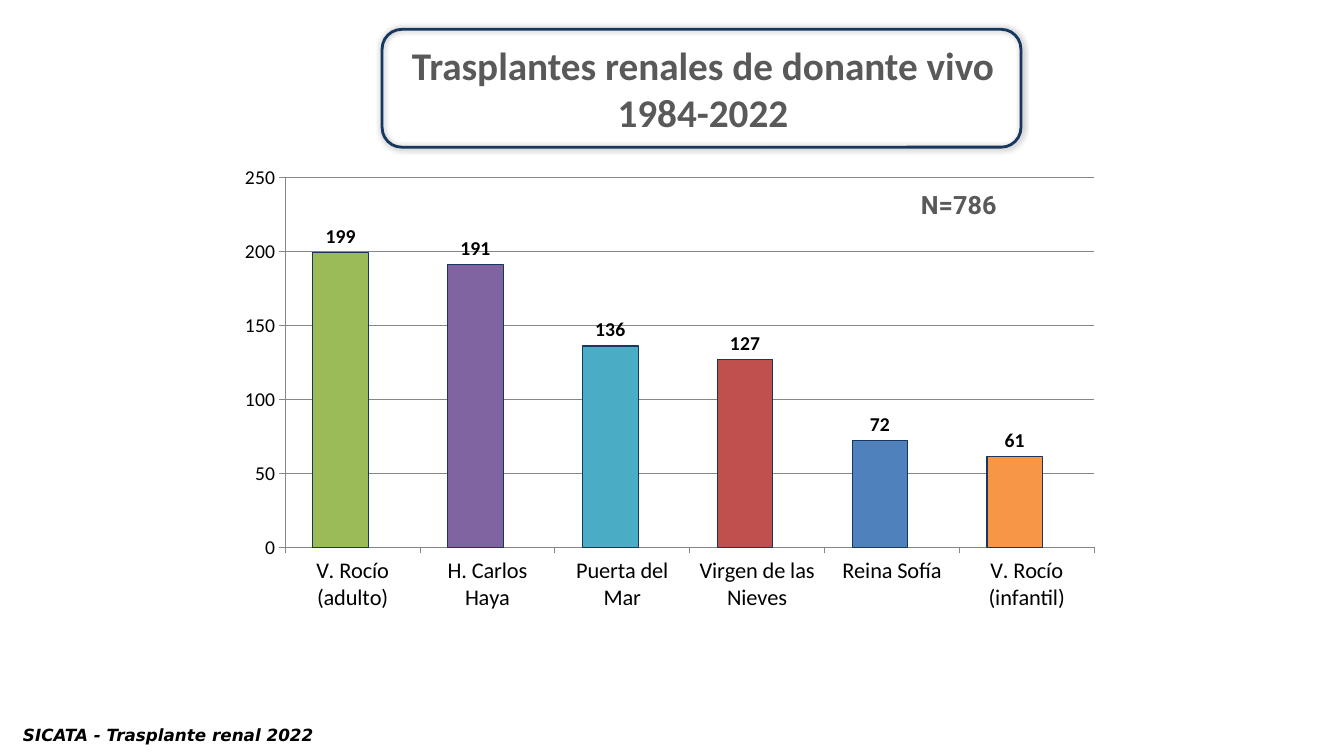
import pptx
import pptx.chart.data
import pptx.dml.color
import pptx.enum.chart
import pptx.enum.dml
import pptx.enum.text
import pptx.oxml
import pptx.util
from dataclasses import dataclass
from pptx.enum.shapes import MSO_SHAPE

Cm, Pt = pptx.util.Cm, pptx.util.Pt
RGB = pptx.dml.color.RGBColor.from_string

HEADING = ["Trasplantes renales de donante vivo", "1984-2022"]
TOTAL = ["N=786"]
FOOTNOTE = ["SICATA - Trasplante renal 2022"]
HOSPITALS = [
    ("V. Rocío (adulto)", 199, "9BBB59"),
    ("H. Carlos Haya", 191, "8064A2"),
    ("Puerta del Mar", 136, "4BACC6"),
    ("Virgen de las Nieves", 127, "C0504D"),
    ("Reina Sofía", 72, "4F81BD"),
    ("V. Rocío (infantil)", 61, "F79646"),
]
PLOT_AREA = {"x": 0.065, "y": 0.045, "w": 0.915, "h": 0.795}


@dataclass(frozen=True)
class Theme:
    ink: str = "000000"
    grey: str = "595959"
    navy: str = "17375E"
    axis: str = "868686"
    body: str = "Calibri"
    accent: str = "Roboto"
    foot: str = "DejaVu Sans"
    heading_size: int = 28
    total_size: int = 18
    category_size: int = 16
    value_size: int = 14
    foot_size: int = 12


THEME = Theme()


def box(left, top, width, height):
    return Cm(left), Cm(top), Cm(width), Cm(height)


def style_font(font, face, size, color, bold=False, italic=False):
    font.name, font.size = face, Pt(size)
    font.bold, font.italic = bold, italic
    font.color.rgb = RGB(color)


def write(frame, lines, align=pptx.enum.text.PP_ALIGN.LEFT, wrap=True, **font_format):
    frame.word_wrap = wrap
    frame.auto_size = pptx.enum.text.MSO_AUTO_SIZE.SHAPE_TO_FIT_TEXT
    frame.vertical_anchor = pptx.enum.text.MSO_ANCHOR.TOP
    for index, line in enumerate(lines):
        paragraph = frame.add_paragraph() if index else frame.paragraphs[0]
        paragraph.alignment = align
        paragraph.space_before = Pt(0)
        run = paragraph.add_run()
        run.text = line
        style_font(run.font, **font_format)


def add_hospital_chart(slide):
    names, counts, colors = zip(*HOSPITALS)
    data = pptx.chart.data.CategoryChartData()
    data.categories = names
    data.add_series("Series 1", counts)
    data.add_series("Series 2", [None] * len(names))
    chart = slide.shapes.add_chart(
        pptx.enum.chart.XL_CHART_TYPE.COLUMN_CLUSTERED,
        *box(5.74, 3.94, 22.28, 11.73), data).chart
    chart.has_title = chart.has_legend = False
    style_font(chart.font, THEME.body, THEME.total_size, THEME.ink)

    plot = chart.plots[0]
    plot.gap_width, plot.overlap, plot.vary_by_categories = 100, 57, False
    transplants, spare = plot.series
    for series, color in ((transplants, "4F81BD"), (spare, "C0504D")):
        series.format.fill.solid()
        series.format.fill.fore_color.rgb = RGB(color)
    for index, color in enumerate(colors):
        bar = transplants.points[index].format
        bar.fill.solid()
        bar.fill.fore_color.rgb = RGB(color)
        bar.line.color.rgb = RGB(THEME.navy)
        bar.line.width = Pt(0.75)
    labels = transplants.data_labels
    labels.show_value = True
    labels.position = pptx.enum.chart.XL_LABEL_POSITION.OUTSIDE_END
    style_font(labels.font, THEME.body, THEME.value_size, THEME.ink, bold=True)

    counts_axis, names_axis = chart.value_axis, chart.category_axis
    counts_axis.minimum_scale, counts_axis.maximum_scale = 0, 250
    counts_axis.major_unit = 50
    counts_axis.has_major_gridlines = True
    for axis, size in ((counts_axis, THEME.value_size), (names_axis, THEME.category_size)):
        axis.major_tick_mark = pptx.enum.chart.XL_TICK_MARK.OUTSIDE
        style_font(axis.tick_labels.font, THEME.body, size, THEME.ink)
    for line in (counts_axis.format.line, names_axis.format.line,
                 counts_axis.major_gridlines.format.line):
        line.color.rgb = RGB(THEME.axis)
        line.width = Pt(0.75)

    namespace = "http://schemas.openxmlformats.org/drawingml/2006/chart"
    places = "".join(f'<c:{side} val="{share}"/>' for side, share in PLOT_AREA.items())
    layout = pptx.oxml.parse_xml(
        f'<c:layout xmlns:c="{namespace}"><c:manualLayout><c:layoutTarget val="inner"/>'
        f'<c:xMode val="edge"/><c:yMode val="edge"/>{places}</c:manualLayout></c:layout>')
    plot_area = chart.element.find(f".//{{{namespace}}}plotArea")
    for previous in plot_area.findall(f"{{{namespace}}}layout"):
        plot_area.remove(previous)
    plot_area.insert(0, layout)


def add_heading_frame(slide):
    frame = slide.shapes.add_shape(MSO_SHAPE.ROUNDED_RECTANGLE, *box(9.63, 0.74, 16.1, 2.97))
    frame.fill.background()
    frame.line.color.rgb = RGB(THEME.navy)
    frame.line.width = Pt(2)
    frame.shadow.inherit = False
    glow = pptx.oxml.parse_xml(
        '<a:outerShdw xmlns:a="http://schemas.openxmlformats.org/drawingml/2006/main" '
        f'blurRad="{Pt(5)}" dist="0" dir="0" algn="ctr" rotWithShape="0">'
        f'<a:srgbClr val="{THEME.ink}"><a:alpha val="40000"/></a:srgbClr></a:outerShdw>')
    frame.element.spPr.find(pptx.oxml.ns.qn("a:effectLst")).append(glow)


def main():
    deck = pptx.Presentation()
    deck.slide_width, deck.slide_height = Cm(33.87), Cm(19.05)
    slide = deck.slides.add_slide(deck.slide_layouts[5])

    add_hospital_chart(slide)

    total = slide.shapes.add_textbox(*box(22.96, 4.65, 2.77, 1.02))
    write(total.text_frame, TOTAL, wrap=False, face=THEME.accent,
          size=THEME.total_size, color=THEME.grey, bold=True)

    heading = slide.shapes.title
    heading.left, heading.top, heading.width, heading.height = box(9.32, 0.91, 16.79, 2.64)
    write(heading.text_frame, HEADING, align=pptx.enum.text.PP_ALIGN.CENTER,
          face=THEME.body, size=THEME.heading_size, color=THEME.grey, bold=True)
    add_heading_frame(slide)

    footnote = slide.shapes.add_textbox(*box(0.33, 18.14, 9.02, 0.76))
    write(footnote.text_frame, FOOTNOTE, face=THEME.foot,
          size=THEME.foot_size, color=THEME.ink, bold=True, italic=True)

    deck.save("out.pptx")


if __name__ == "__main__":
    main()
